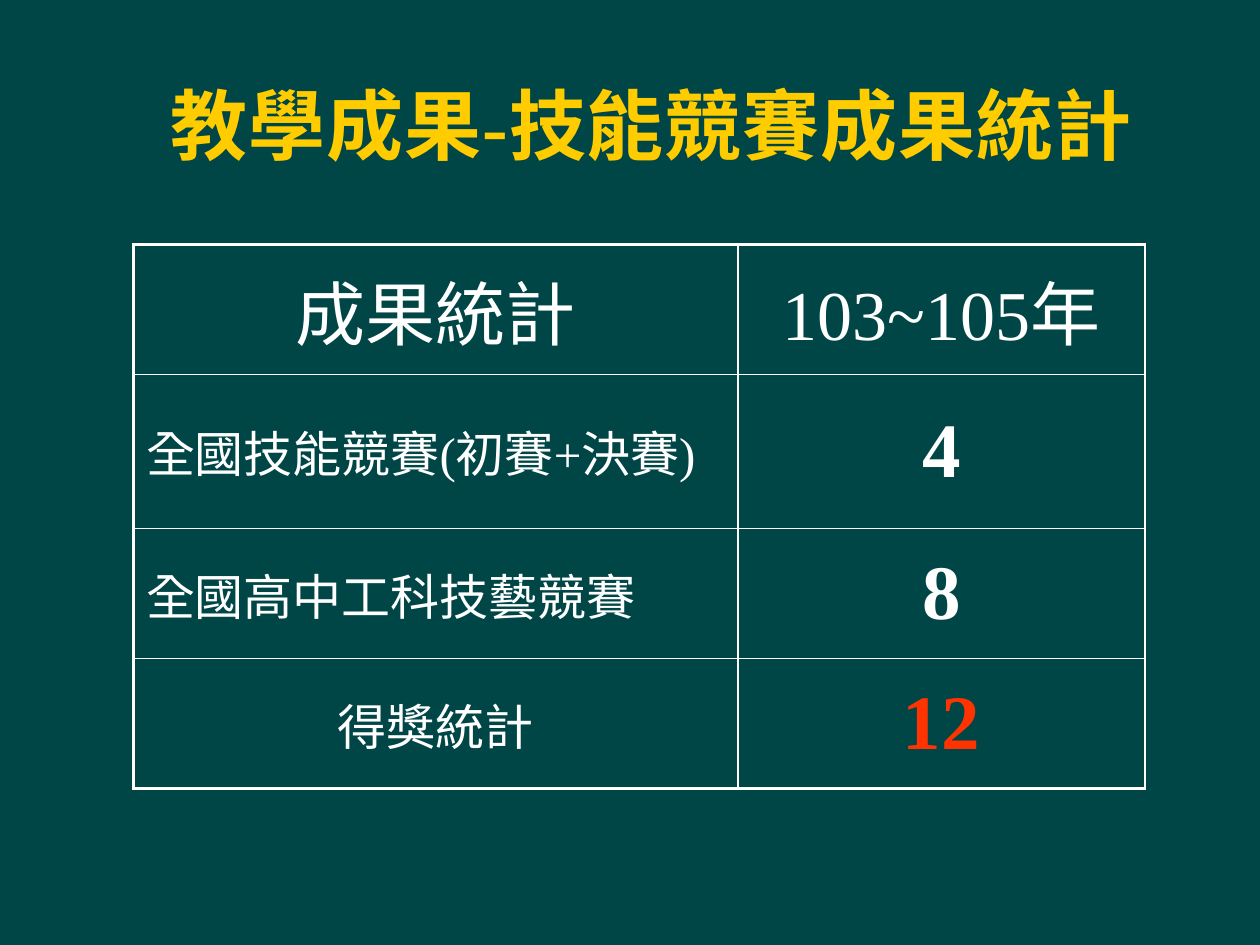
from lxml.etree import SubElement
from pptx import Presentation
from pptx.dml.color import RGBColor
from pptx.enum.text import MSO_ANCHOR, MSO_AUTO_SIZE, PP_ALIGN
from pptx.oxml.ns import qn
from pptx.util import Cm, Pt

BACKGROUND = RGBColor(0x00, 0x46, 0x46)
GOLD = RGBColor(0xFF, 0xCC, 0x00)
WHITE = RGBColor(0xFF, 0xFF, 0xFF)
RED = RGBColor(0xFF, 0x33, 0x00)
SERIF = "Times New Roman"
SANS = "Noto Sans CJK SC"


def format_run(r, size, font, color, bold):
    r.font.size = Pt(size)
    r.font.name = font
    r.font.bold = bold
    r.font.color.rgb = color
    rPr = r.font._element
    rPr.set("lang", "zh-TW")
    SubElement(rPr, qn("a:ea")).set("typeface", SANS)


def set_border(cell, side, width):
    ln = SubElement(cell._tc.get_or_add_tcPr(), qn("a:ln" + side), w=str(Pt(width)))
    fill = SubElement(ln, qn("a:solidFill"))
    SubElement(fill, qn("a:srgbClr"), val=str(WHITE))


prs = Presentation()
prs.slide_width, prs.slide_height = Cm(25.4), Cm(19.05)
s = prs.slides.add_slide(prs.slide_layouts[5])
s.background.fill.solid()
s.background.fill.fore_color.rgb = BACKGROUND

title = s.shapes.title
title.left, title.top, title.width, title.height = Cm(1.7), Cm(0.91), Cm(22.86), Cm(3.18)
tf = title.text_frame
tf.text = "教學成果-技能競賽成果統計"
tf.auto_size = MSO_AUTO_SIZE.NONE
tf.vertical_anchor = MSO_ANCHOR.MIDDLE
p = tf.paragraphs[0]
p.alignment = PP_ALIGN.CENTER
format_run(p.runs[0], 44, SERIF, GOLD, True)
p.runs[0].font._element.set("spc", "50")

rows = [
    [("成果統計", 40, SANS, WHITE, False, True), ("103~105年", 40, SERIF, WHITE, False, True)],
    [("全國技能競賽(初賽+決賽)", 28, SERIF, WHITE, False, False), ("4", 44, SERIF, WHITE, True, True)],
    [("全國高中工科技藝競賽", 28, SANS, WHITE, False, False), ("8", 44, SERIF, WHITE, True, True)],
    [("得獎統計", 28, "Arial", WHITE, False, True), ("12", 44, SERIF, RED, True, True)],
]
table = s.shapes.add_table(len(rows), 2, Cm(2.69), Cm(4.93), Cm(20.4), Cm(10.48)).table
table.first_row = table.horz_banding = False
table.columns[0].width, table.columns[1].width = Cm(12.19), Cm(8.2)

for i, row in enumerate(rows):
    table.rows[i].height = Cm(2.62)
    for j, (text, size, font, color, bold, centered) in enumerate(row):
        cell = table.cell(i, j)
        cell.vertical_anchor = MSO_ANCHOR.MIDDLE
        set_border(cell, "L", 2.25 if j == 0 else 1)
        set_border(cell, "R", 1)
        set_border(cell, "T", 2.25 if i == 0 else 1)
        set_border(cell, "B", 2.25 if i == len(rows) - 1 else 1)
        cell.fill.background()
        p = cell.text_frame.paragraphs[0]
        p.text = text
        if centered:
            p.alignment = PP_ALIGN.CENTER
            p.space_before = Pt(size * 0.2)
        format_run(p.runs[0], size, font, color, bold)

prs.save("out.pptx")
